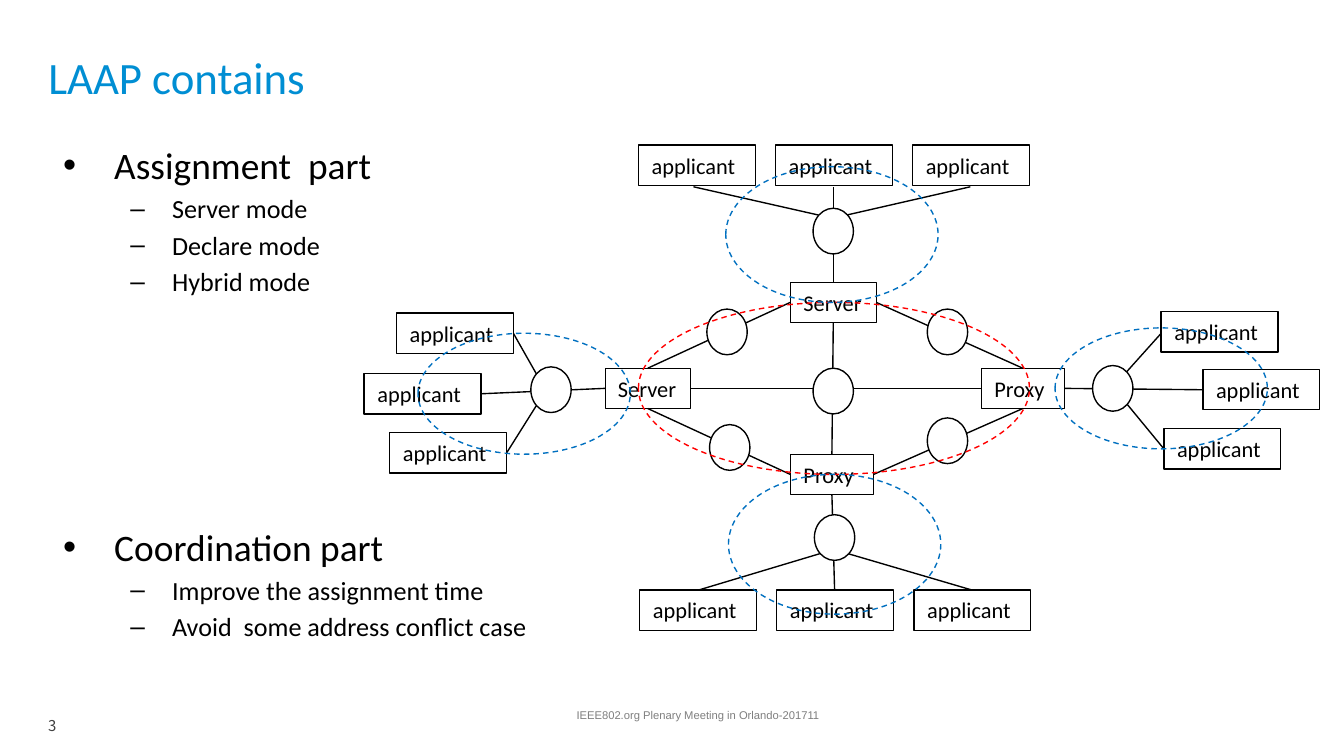
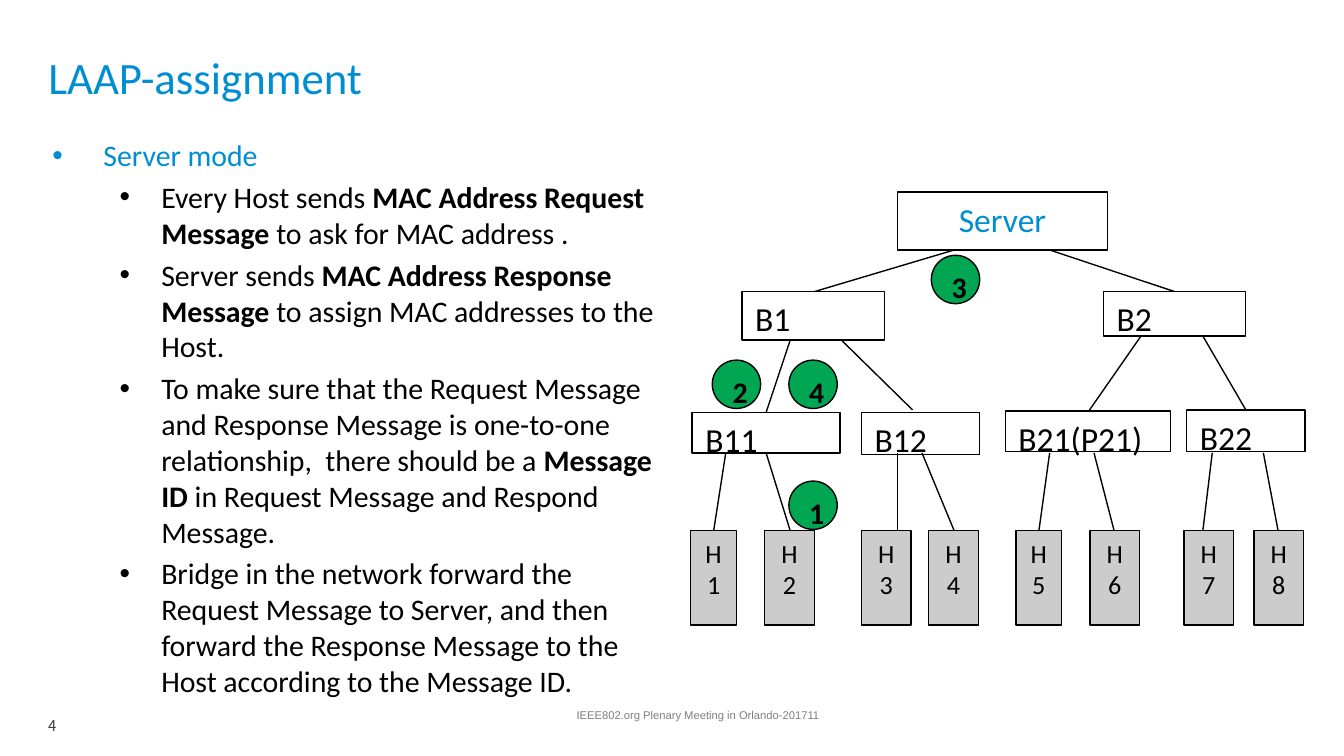
"""Build two slides on LAAP: its network parts and its server assignment mode."""
from lxml import etree
from pptx import Presentation
from pptx import util as u
from pptx.dml.color import RGBColor
from pptx.enum import dml, shapes, text
from pptx.oxml import ns

COLORS = {
    "title": "008ED3", "text": "000000", "footer": "7F7F7F", "number": "404040",
    "line": "000000", "bridge": "FFFFFF", "host": "CCCCCC", "step": "00A651",
    "coordination": "FF0000", "assignment": "0070C0",
}
RECT = shapes.MSO_SHAPE.RECTANGLE
OVAL = shapes.MSO_SHAPE.OVAL
INDENTS = [(0.38, 0.38), (0.81, 0.31)]


def rgb(name):
    """Return the named colour."""
    return RGBColor.from_string(COLORS[name])


def set_font(paragraph, size, color="text", face="Calibri", bold=None):
    """Format the font of a whole paragraph."""
    font = paragraph.font
    font.size, font.name, font.bold = u.Pt(size), face, bold
    font.color.rgb = rgb(color)


def set_frame(frame, margin=None, anchor=text.MSO_ANCHOR.TOP):
    """Make a text frame wrap, with an anchor and an optional equal margin."""
    frame.word_wrap = True
    frame.auto_size = text.MSO_AUTO_SIZE.NONE
    frame.vertical_anchor = anchor
    if margin is not None:
        frame.margin_left = frame.margin_right = u.Inches(margin)
        frame.margin_top = frame.margin_bottom = u.Inches(margin)


def place(shape, left, top, width, height):
    """Move and size a shape in inches."""
    shape.left, shape.top = u.Inches(left), u.Inches(top)
    shape.width, shape.height = u.Inches(width), u.Inches(height)


def add_label(slide, area, margin=None, anchor=text.MSO_ANCHOR.TOP):
    """Add a text box and return its first paragraph."""
    label = slide.shapes.add_textbox(*map(u.Inches, area))
    set_frame(label.text_frame, margin, anchor)
    return label.text_frame.paragraphs[0]


def add_page(deck, heading):
    """Add a slide with its title, footer and slide number."""
    slide = deck.slides.add_slide(deck.slide_layouts[1])
    title = slide.shapes.title
    place(title, 0.36, 0.37, 9.31, 0.79)
    set_frame(title.text_frame, 0)
    title.text_frame.text = heading
    paragraph = title.text_frame.paragraphs[0]
    paragraph.alignment = text.PP_ALIGN.LEFT
    set_font(paragraph, 24, "title")

    footer = add_label(slide, (4.29, 5.27, 2.4, 0.14), 0)
    footer.text = "IEEE802.org Plenary Meeting in Orlando-201711"
    set_font(footer, 6, "footer", "Arial")

    number = add_label(slide, (0.26, 5.25, 0.46, 0.3), anchor=text.MSO_ANCHOR.MIDDLE)
    set_font(number, 8, "number", "Noto Sans CJK SC")
    field = etree.SubElement(number._p, ns.qn("a:fld"), type="slidenum",
                             id="{B6F15528-21DE-4FAA-801E-634DDDAF4B2B}")
    etree.SubElement(field, ns.qn("a:rPr"), lang="en-US")
    etree.SubElement(field, ns.qn("a:t")).text = str(len(deck.slides) + 2)
    return slide


def fill_body(slide, area, items):
    """Write (level, bullet, size, colour, gap, words) items; ** marks bold."""
    body = slide.placeholders[1]
    place(body, *area)
    frame = body.text_frame
    set_frame(frame, 0)
    for index, (level, bullet, size, color, gap, words) in enumerate(items):
        paragraph = frame.paragraphs[0] if index == 0 else frame.add_paragraph()
        paragraph.level = level
        paragraph.space_before = u.Pt(gap)
        set_font(paragraph, size, color)
        for part, piece in enumerate(words.split("**")):
            run = paragraph.add_run()
            run.text = piece
            if part % 2:
                run.font.bold = True
        margin, hanging = INDENTS[level]
        properties = paragraph._p.get_or_add_pPr()
        properties.set("marL", str(u.Inches(margin)))
        properties.set("indent", str(-u.Inches(hanging)))
        mark = etree.Element(ns.qn("a:buChar"), char=bullet)
        properties.find(ns.qn("a:defRPr")).addprevious(mark)


def add_node(parent, kind, area, fill=None, weight=0.75):
    """Add an outlined shape without shadow."""
    node = parent.add_shape(kind, *map(u.Inches, area))
    node.shadow.inherit = False
    if fill:
        node.fill.solid()
        node.fill.fore_color.rgb = rgb(fill)
    else:
        node.fill.background()
    node.line.color.rgb = rgb("line")
    node.line.width = u.Pt(weight)
    return node


def add_box(parent, words, area, size=12, kind=RECT, fill=None, color="text",
            centred=False, bold=None, weight=0.75):
    """Add a node with a label inside."""
    frame = add_node(parent, kind, area, fill, weight).text_frame
    set_frame(frame)
    frame.text = words
    paragraph = frame.paragraphs[0]
    paragraph.alignment = text.PP_ALIGN.CENTER if centred else text.PP_ALIGN.LEFT
    set_font(paragraph, size, color, bold=bold)


def add_zone(parent, area, color):
    """Add a dashed ellipse around a part of the network."""
    zone = add_node(parent, OVAL, area)
    zone.line.color.rgb = rgb(color)
    zone.line.dash_style = dml.MSO_LINE.DASH


def add_links(parent, links):
    """Add straight lines given as (x1, y1, x2, y2)."""
    for ends in links:
        link = parent.add_connector(shapes.MSO_CONNECTOR.STRAIGHT,
                                    *map(u.Inches, ends))
        link.line.color.rgb = rgb("line")
        link.line.width = u.Pt(0.75)
        etree.SubElement(link._element.spPr, ns.qn("a:effectLst"))


def build_contents(deck):
    """Build the slide on the two parts of LAAP."""
    slide = add_page(deck, "LAAP contains")
    fill_body(slide, (0.47, 1.06, 8.65, 0.76), [
        (0, "•", 20, "text", 0, "Assignment  part"),
        (1, "–", 14, "text", 2.8, "Server mode"),
        (1, "–", 14, "text", 2.8, "Declare mode"),
        (1, "–", 14, "text", 2.8, "Hybrid mode"),
        (0, "•", 20, "text", 121.5, "Coordination part"),
        (1, "–", 14, "text", 2.8, "Improve the assignment time"),
        (1, "–", 14, "text", 2.8, "Avoid  some address conflict case"),
    ])
    network = slide.shapes
    add_links(network, [
        (4.82, 2.74, 5.88, 2.25), (6.52, 2.25, 7.61, 2.74),
        (7.61, 3.04, 6.5, 3.53), (4.82, 3.04, 5.88, 3.53),
        (6.2, 2.4, 6.19, 3.38), (5.14, 2.89, 7.3, 2.89),
        (4.5, 2.89, 3.58, 2.93), (3.82, 2.48, 3.99, 2.78),
        (3.77, 3.37, 3.99, 3.02), (7.92, 2.89, 8.95, 2.9),
        (8.64, 2.48, 8.38, 2.77), (8.66, 3.34, 8.38, 3),
        (6.19, 3.68, 6.21, 4.39), (5.2, 4.39, 6.1, 4.12),
        (7.23, 4.39, 6.31, 4.12), (6.3, 1.6, 7.22, 1.39),
        (6.09, 1.6, 5.16, 1.39), (6.2, 2.1, 6.2, 1.39),
    ])
    for left, top in [(5.26, 2.3), (5.28, 3.16), (6.9, 3.11), (6.9, 2.3),
                      (6.05, 2.74), (3.95, 2.73), (8.13, 2.72), (6.06, 3.83),
                      (6.05, 1.55)]:
        add_node(network, OVAL, (left, top, 0.3, 0.34), "bridge")
    for role, left, top, width in [
            ("Server", 4.5, 2.74, 0.64), ("Server", 5.88, 2.1, 0.64),
            ("Proxy", 7.3, 2.74, 0.62), ("Proxy", 5.88, 3.38, 0.62)]:
        add_box(network, role, (left, top, width, 0.3), weight=0.25)
    sides = [(2.95, 2.33), (2.71, 2.78), (2.9, 3.22),
             (8.64, 2.32), (8.95, 2.75), (8.66, 3.19)]
    rows = [(start + 1.02 * column, top)
            for start, top in [(4.75, 1.08), (4.76, 4.39)] for column in range(3)]
    for left, top in sides + rows:
        add_box(network, "applicant", (left, top, 0.87, 0.3))
    add_zone(network, (4.75, 2.25, 2.91, 1.28), "coordination")
    for left, top, height in [(3.11, 2.48, 0.9), (7.85, 2.44, 0.9),
                              (5.4, 1.24, 1.01), (5.42, 3.53, 1.04)]:
        add_zone(network, (left, top, 1.58, height), "assignment")


def build_assignment(deck):
    """Build the slide on server mode with its tree of bridges and hosts."""
    slide = add_page(deck, "LAAP-assignment")
    steps = [
        "Every Host sends** MAC Address Request Message** to ask for MAC address .",
        "Server sends **MAC Address Response Message** to assign MAC addresses "
        "to the Host.",
        "To make sure that the Request Message and Response Message is one-to-one "
        "relationship,  there should be a **Message ID** in Request Message and "
        "Respond Message.",
        "Bridge in the network forward the Request Message to Server, and then "
        "forward the Response Message to the Host according to the Message ID.",
    ]
    fill_body(slide, (0.39, 1.02, 4.56, 3.49),
              [(0, "•", 16, "title", 0, "Server mode")]
              + [(1, "•", 16, "text", 3.2, step) for step in steps])

    tree = slide.shapes.add_group_shape().shapes
    add_box(tree, "Server", (6.68, 1.43, 1.56, 0.43), 18, color="title",
            centred=True)
    for bridge, *area in [
            ("B1", 5.52, 2.17, 1.06, 0.36), ("B2", 8.21, 2.17, 1.06, 0.33),
            ("B11", 5.15, 3.07, 1.1, 0.3), ("B12", 6.41, 3.07, 0.88, 0.31),
            ("B21(P21)", 7.48, 3.06, 1.23, 0.3), ("B22", 8.83, 3.05, 0.88, 0.31)]:
        add_box(tree, bridge, area, 18)
    add_links(tree, [
        (7.1, 1.86, 6.06, 2.17), (7.81, 1.86, 8.74, 2.17),
        (5.88, 2.53, 5.7, 3.07), (6.26, 2.53, 6.79, 3.05),
        (8.49, 2.5, 8.1, 3.06), (8.95, 2.5, 9.27, 3.05),
    ])
    hosts = [(5.14, 0.34, 5.4, 5.31), (5.69, 0.37, 5.7, 5.88),
             (6.41, 0.37, 6.68, 6.68), (6.91, 0.37, 6.86, 7.1),
             (7.56, 0.34, 7.81, 7.73), (8.11, 0.37, 8.14, 8.29),
             (8.81, 0.37, 9.02, 8.95), (9.33, 0.37, 9.4, 9.51)]
    for number, (left, width, bridge_x, host_x) in enumerate(hosts, 1):
        add_box(tree, f"H{number}", (left, 3.95, width, 0.7), 14, fill="host",
                centred=True)
        add_links(tree, [(bridge_x, 3.37, host_x, 3.95)])
    for number, (left, top) in enumerate(
            [(5.87, 3.58), (5.3, 2.68), (6.93, 1.9), (5.87, 2.68)], 1):
        add_box(tree, str(number), (left, top, 0.36, 0.36), 16, OVAL, "step",
                centred=True, bold=True)


def main():
    """Build and save the deck."""
    deck = Presentation()
    deck.slide_width = u.Inches(10)
    deck.slide_height = deck.slide_width * 9 // 16
    deck.element.set("firstSlideNum", "3")
    build_contents(deck)
    build_assignment(deck)
    deck.save("out.pptx")


if __name__ == "__main__":
    main()
